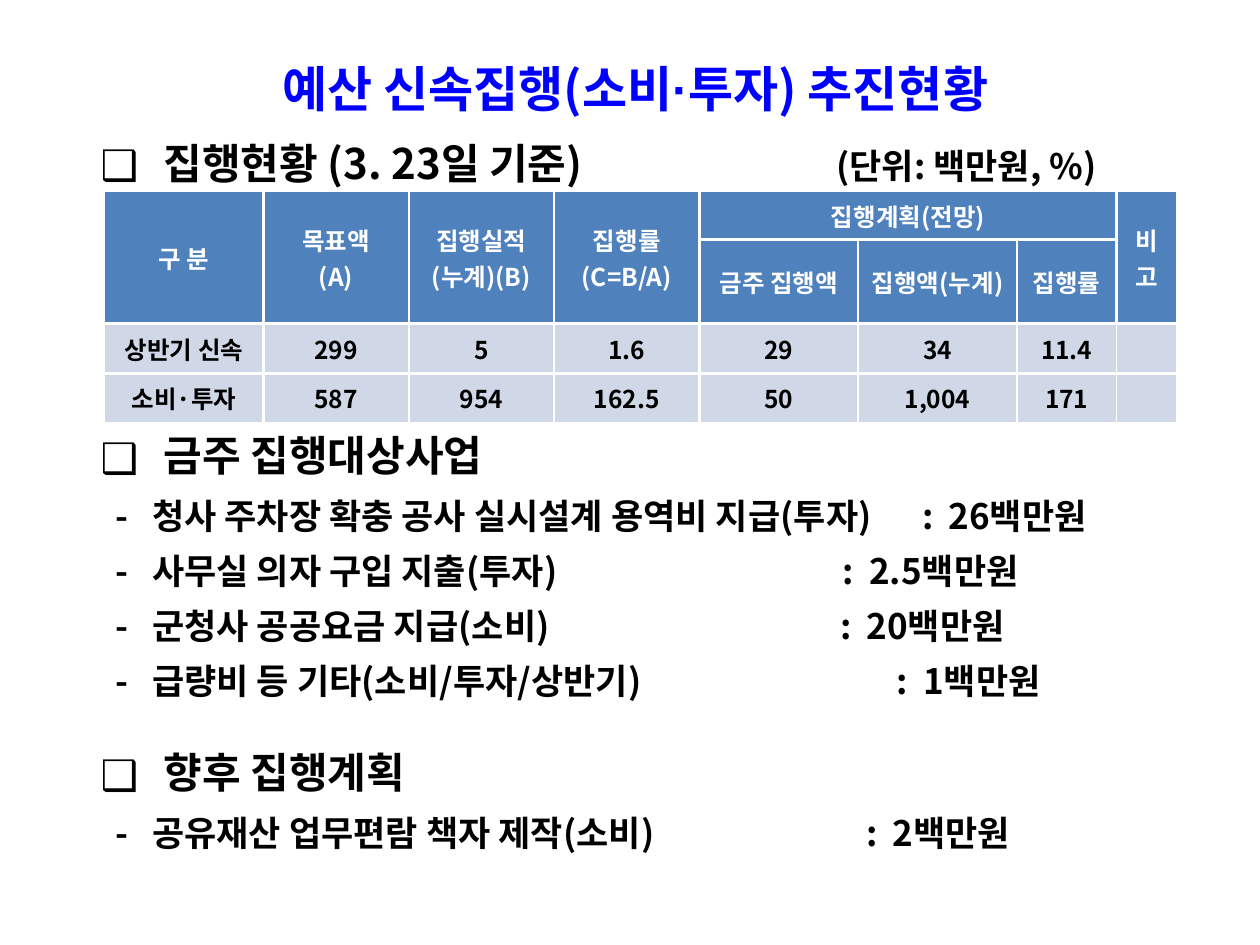
import pptx
import pptx.dml.color
import pptx.enum.text
import pptx.oxml.ns
import pptx.util
from lxml import etree
from pptx.util import Cm, Pt

RGBColor = pptx.dml.color.RGBColor
BLUE = RGBColor(0x00, 0x00, 0xFF)
BLACK = RGBColor(0x00, 0x00, 0x00)
WHITE = RGBColor(0xFF, 0xFF, 0xFF)
HEADER_FILL = RGBColor(0x4F, 0x81, 0xBD)
BODY_FILL = RGBColor(0xD0, 0xD8, 0xE8)

FONT = "Noto Sans CJK KR"
CENTER = pptx.enum.text.PP_ALIGN.CENTER
MIDDLE = pptx.enum.text.MSO_ANCHOR.MIDDLE

LEFT, WIDTH = Cm(1.78), Cm(22.05)
ITEM_SHIFT, ITEM_DROP = Cm(0.3), Cm(1.45)
TEXT_TAB, AMOUNT_GAP = Cm(0.74), Cm(0.53)

# Each item: wording, amount, position of the colon
THIS_WEEK = [
    ("청사 주차장 확충 공사 실시설계 용역비 지급(투자)", "26백만원", Cm(16.26)),
    ("사무실 의자 구입 지출(투자)", "2.5백만원", Cm(14.66)),
    ("군청사 공공요금 지급(소비)", "20백만원", Cm(14.61)),
    ("급량비 등 기타(소비/투자/상반기)", "1백만원", Cm(15.75)),
]
LATER = [("공유재산 업무편람 책자 제작(소비)", "2백만원", Cm(15.14))]

COLUMN_WIDTHS = [3.2, 2.93, 2.93, 2.93, 3.2, 3.2, 2.01, 1.22]
ROW_HEIGHTS = [0.97, 1.69, 1.01, 0.99]
TABLE_ROWS = [
    ["구 분", "목표액\n(A)", "집행실적(누계)(B)", "집행률\n(C=B/A)",
     "집행계획(전망)", "", "", "비 고"],
    ["", "", "", "", "금주 집행액", "집행액(누계)", "집행률", ""],
    ["상반기 신속", "299", "5", "1.6", "29", "34", "11.4", ""],
    ["소비·투자", "587", "954", "162.5", "50", "1,004", "171", ""],
]
HEADER_ROWS = 2


def add_xml(parent, tag, **attributes):
    return etree.SubElement(parent, pptx.oxml.ns.qn(tag), attributes)


def add_span(para, text, size, color, font=FONT):
    span = para.add_run()
    span.text = text
    span.font.size = Pt(size)
    span.font.bold = True
    span.font.color.rgb = color
    span.font.name = font
    span.font._element.set("kern", "0")
    add_xml(span.font._element, "a:ea", typeface=font)


def add_text_box(page, left, top, width, height):
    frame = page.shapes.add_textbox(left, top, width, height).text_frame
    frame.word_wrap = True
    return frame


def add_title(page, left, top, width):
    para = add_text_box(page, left, top, width, Cm(1.7)).paragraphs[0]
    para.alignment = CENTER
    para.line_spacing = Pt(40)
    add_span(para, "예산 신속집행(소비", 28, BLUE)
    add_span(para, "·", 28, BLUE, "Arial")
    add_span(para, "투자) 추진현황", 28, BLUE)


def add_unit_note(page, left, top, width):
    para = add_text_box(page, left, top, width, Cm(1.6)).paragraphs[0]
    para.line_spacing = Pt(39)
    add_span(para, "(단위: 백만원, %)", 20, BLACK)


def add_heading(page, left, top, width, text):
    para = add_text_box(page, left, top, width, Cm(1.7)).paragraphs[0]
    para.line_spacing = Pt(40)
    properties = para._p.get_or_add_pPr()
    properties.set("marL", str(Cm(1.27)))
    properties.set("indent", str(-Cm(1.27)))
    add_xml(properties, "a:buFont", typeface=FONT)
    add_xml(properties, "a:buChar", char="❑")
    add_span(para, text, 24, BLACK)


def add_items(page, left, top, width, items):
    """Write dashed lines, each with its amount at tab stops."""
    frame = add_text_box(page, left, top, width, Cm(0.25) + Cm(1.11) * len(items))
    for index, (text, amount, colon) in enumerate(items):
        para = frame.add_paragraph() if index else frame.paragraphs[0]
        para.line_spacing = Pt(31.4)
        stops = add_xml(para._p.get_or_add_pPr(), "a:tabLst")
        for position in (TEXT_TAB, colon, colon + AMOUNT_GAP):
            add_xml(stops, "a:tab", pos=str(position), algn="l")
        add_span(para, f"-\t{text}\t:\t{amount}", 20, BLACK)


def add_section(page, left, top, width, heading, items):
    add_heading(page, left, top, width, heading)
    add_items(page, left + ITEM_SHIFT, top + ITEM_DROP, width - ITEM_SHIFT, items)


def set_borders(cell, widths):
    """Draw white left, right, top and bottom borders, widths in points."""
    properties = cell._tc.get_or_add_tcPr()
    for index, (side, width) in enumerate(zip("LRTB", widths)):
        line = add_xml(properties, f"a:ln{side}", w=str(Pt(width)))
        fill = add_xml(line, "a:solidFill")
        add_xml(fill, "a:srgbClr", val=str(WHITE))
        properties.insert(index, line)


def fill_cell(cell, text, is_header):
    cell.fill.solid()
    cell.fill.fore_color.rgb = HEADER_FILL if is_header else BODY_FILL
    cell.vertical_anchor = MIDDLE
    frame = cell.text_frame
    for index, line in enumerate(text.split("\n")):
        para = frame.add_paragraph() if index else frame.paragraphs[0]
        para.alignment = CENTER
        para.font.size = Pt(14)
        if line:
            add_span(para, line, 14, WHITE if is_header else BLACK)


def add_status_table(page, left, top):
    row_count, column_count = len(ROW_HEIGHTS), len(COLUMN_WIDTHS)
    table = page.shapes.add_table(
        row_count, column_count, left, top,
        Cm(sum(COLUMN_WIDTHS)), Cm(sum(ROW_HEIGHTS))).table
    for column, width in zip(table.columns, COLUMN_WIDTHS):
        column.width = Cm(width)
    for row, height in zip(table.rows, ROW_HEIGHTS):
        row.height = Cm(height)

    horizontal = [1, 1.5, 2.25, 1.5, 1]
    vertical = [1] + [1.5] * (column_count - 2) + [1, 1]
    for r, texts in enumerate(TABLE_ROWS):
        for c, text in enumerate(texts):
            cell = table.cell(r, c)
            fill_cell(cell, text, r < HEADER_ROWS)
            is_tall = r == 0 and not 4 <= c <= 6
            bottom = horizontal[HEADER_ROWS if is_tall else r + 1]
            set_borders(cell, (vertical[c], vertical[c + 1], horizontal[r], bottom))

    for c in (0, 1, 2, 3, 7):
        table.cell(0, c).merge(table.cell(1, c))
    table.cell(0, 4).merge(table.cell(0, 6))


def main():
    deck = pptx.Presentation()
    deck.slide_width, deck.slide_height = Cm(25.4), Cm(19.05)
    page = deck.slides.add_slide(deck.slide_layouts[6])
    add_title(page, LEFT, Cm(0.84), WIDTH)
    add_heading(page, LEFT, Cm(2.25), Cm(13), "집행현황 (3. 23일 기준)")
    add_unit_note(page, Cm(16.61), Cm(2.25), Cm(7.2))
    add_status_table(page, Cm(2.11), Cm(3.86))
    add_section(page, LEFT, Cm(8.14), WIDTH, "금주 집행대상사업", THIS_WEEK)
    add_section(page, LEFT, Cm(14.53), WIDTH, "향후 집행계획", LATER)
    deck.save("out.pptx")


if __name__ == "__main__":
    main()
